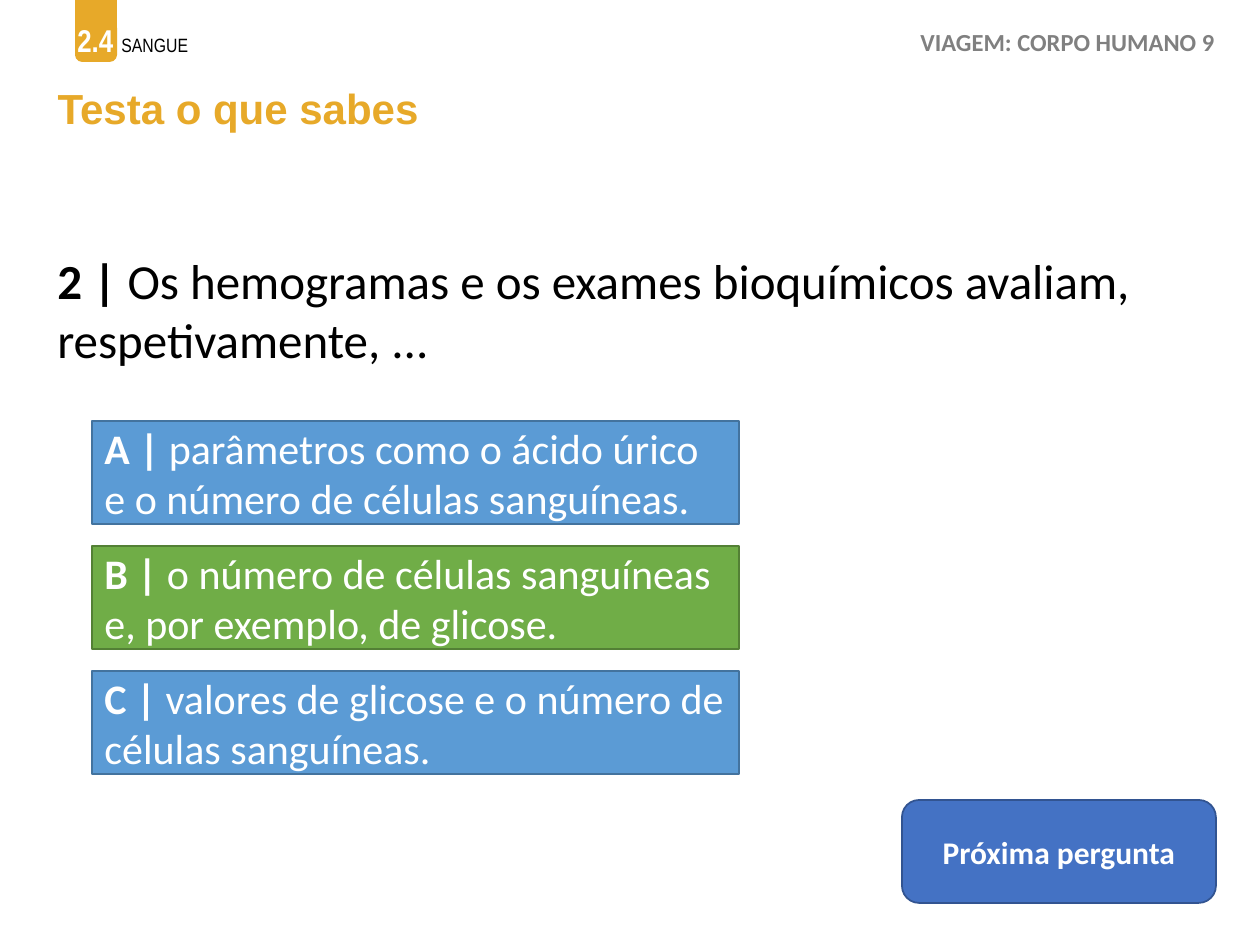
from dataclasses import dataclass

from pptx import Presentation
from pptx.dml.color import RGBColor
from pptx.enum import shapes, text
from pptx.util import Emu, Pt

PX = 914400 / 126


@dataclass(frozen=True)
class Theme:
    accent: str = "E7A929"
    spacer: str = "AFC439"
    ink: str = "000000"
    muted: str = "808080"
    light: str = "FFFFFF"
    option: tuple = ("5B9BD5", "43739E")
    correct: tuple = ("70AD47", "538035")
    button: tuple = ("4472C4", "325491")
    body_font: str = "Calibri"
    title_font: str = "Arial"
    badge_font: str = "Arial Narrow"
    section_size: int = 11
    header_size: int = 14
    badge_size: int = 18
    spacer_size: int = 20
    button_size: int = 18
    option_size: int = 24
    title_size: int = 24
    question_size: int = 28


THEME = Theme()


def px(*lengths):
    return [Emu(round(length * PX)) for length in lengths]


def add_run(paragraph, words, size, color, bold=False, font=THEME.body_font):
    run = paragraph.add_run()
    run.text = words
    run.font.name = font
    run.font.size = Pt(size)
    run.font.bold = bold
    run.font.color.rgb = RGBColor.from_string(color)


def add_text_box(slide, box, alignment=text.PP_ALIGN.LEFT):
    frame = slide.shapes.add_textbox(*px(*box)).text_frame
    frame.word_wrap = True
    paragraph = frame.paragraphs[0]
    paragraph.alignment = alignment
    return paragraph


def add_panel(slide, kind, box, fill, line=None, alignment=text.PP_ALIGN.LEFT):
    shape = slide.shapes.add_shape(kind, *px(*box))
    shape.shadow.inherit = False
    shape.fill.solid()
    shape.fill.fore_color.rgb = RGBColor.from_string(fill)
    if line:
        shape.line.color.rgb = RGBColor.from_string(line)
        shape.line.width = Pt(1)
    else:
        shape.line.fill.background()
    shape.text_frame.word_wrap = True
    shape.text_frame.vertical_anchor = text.MSO_ANCHOR.MIDDLE
    paragraph = shape.text_frame.paragraphs[0]
    paragraph.alignment = alignment
    return paragraph


def add_header(slide, box, number, section, course):
    left, top, width, height = box
    add_panel(slide, shapes.MSO_SHAPE.ROUNDED_RECTANGLE,
              (left + 10, top - 27, 42, 78), THEME.accent)
    label = add_text_box(slide, (left, top, 901, height))
    add_run(label, number, THEME.badge_size, THEME.light, True, THEME.badge_font)
    add_run(label, " ", THEME.spacer_size, THEME.spacer, True, THEME.badge_font)
    add_run(label, section, THEME.section_size, THEME.ink, font=THEME.badge_font)
    course_width = 325
    heading = add_text_box(slide, (left + width - course_width, top + 10, course_width, 43),
                           text.PP_ALIGN.CENTER)
    add_run(heading, course, THEME.header_size, THEME.muted, True)


def add_title(slide, box, words):
    title = slide.shapes.title
    title.left, title.top, title.width, title.height = px(*box)
    title.text_frame.vertical_anchor = text.MSO_ANCHOR.MIDDLE
    paragraph = title.text_frame.paragraphs[0]
    paragraph.alignment = text.PP_ALIGN.LEFT
    paragraph.line_spacing = 0.9
    add_run(paragraph, words, THEME.title_size, THEME.accent, True, THEME.title_font)


def add_question(slide, box, number, words):
    paragraph = add_text_box(slide, box)
    add_run(paragraph, f"{number} |", THEME.question_size, THEME.ink, True)
    add_run(paragraph, f" {words}", THEME.question_size, THEME.ink)


def add_options(slide, box, options, correct):
    left, top, width, height = box
    option_height = 103
    pitch = (height - option_height) / (len(options) - 1)
    for index, (letter, words) in enumerate(options.items()):
        colors = THEME.correct if letter == correct else THEME.option
        option_box = (left, top + index * pitch, width, option_height)
        paragraph = add_panel(slide, shapes.MSO_SHAPE.RECTANGLE, option_box, *colors)
        add_run(paragraph, f"{letter} | ", THEME.option_size, THEME.light, True)
        add_run(paragraph, words, THEME.option_size, THEME.light)


def add_next_button(slide, box, words):
    paragraph = add_panel(slide, shapes.MSO_SHAPE.ROUNDED_RECTANGLE, box, *THEME.button,
                          text.PP_ALIGN.CENTER)
    add_run(paragraph, words, THEME.button_size, THEME.light, True)


def main():
    presentation = Presentation()
    presentation.slide_width, presentation.slide_height = px(1260, 945)
    slide = presentation.slides.add_slide(presentation.slide_layouts.get_by_name("Title Only"))
    add_header(slide, (65, 11, 1165, 55), "2.4", "SANGUE", "VIAGEM: CORPO HUMANO 9")
    add_title(slide, (45, 72, 1171, 78), "Testa o que sabes")
    add_question(slide, (45, 244, 1171, 131), 2,
                 "Os hemogramas e os exames bioquímicos avaliam, respetivamente, ...")
    add_options(slide, (92, 421, 647, 353), {
        "A": "parâmetros como o ácido úrico e o número de células sanguíneas.",
        "B": "o número de células sanguíneas e, por exemplo, de glicose.",
        "C": "valores de glicose e o número de células sanguíneas.",
    }, correct="B")
    add_next_button(slide, (902, 800, 314, 103), "Próxima pergunta")
    presentation.save("out.pptx")


if __name__ == "__main__":
    main()
